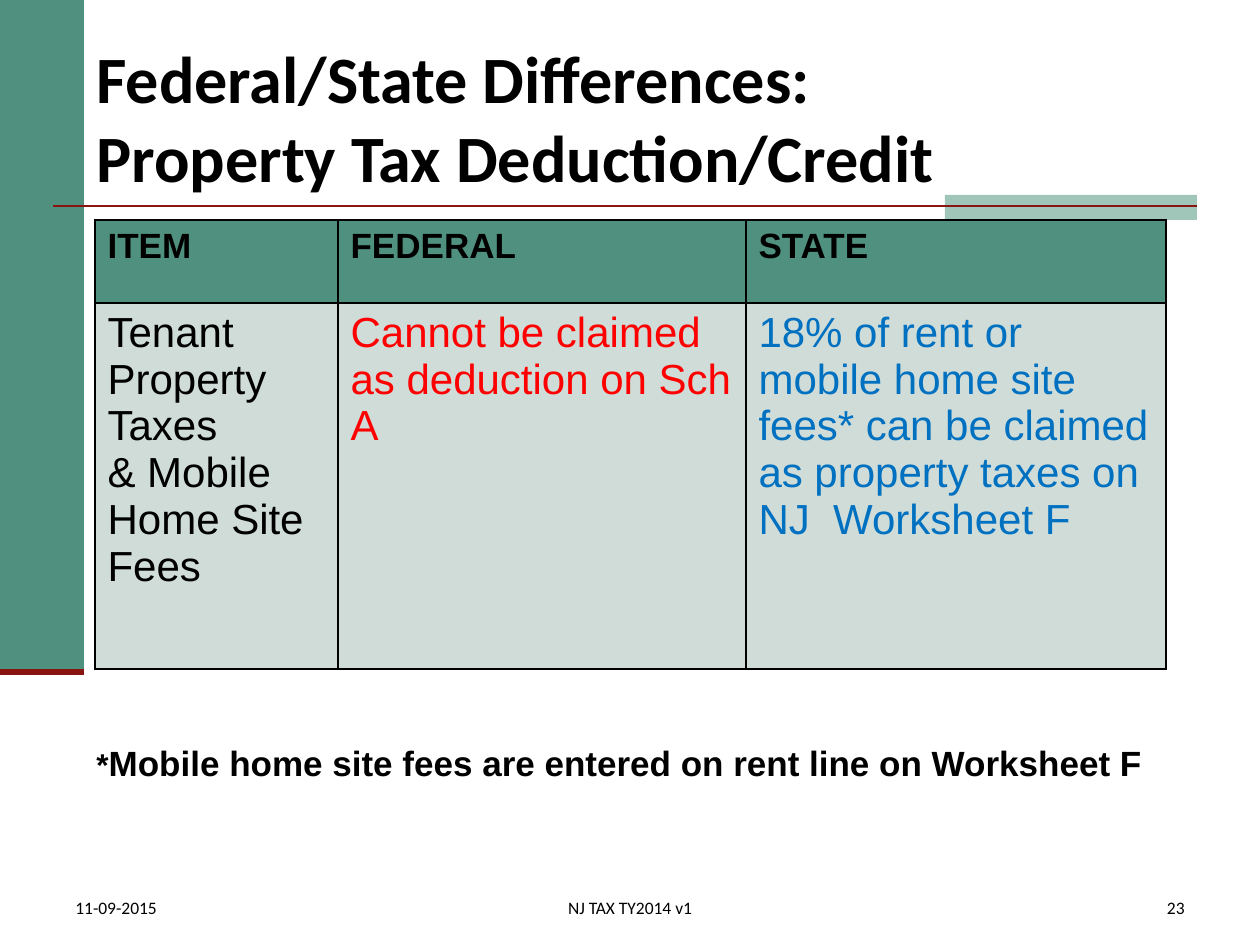
from dataclasses import dataclass

from lxml import etree
from pptx import Presentation
from pptx import util as u
from pptx.dml.color import RGBColor
from pptx.enum import shapes, text
from pptx.oxml import ns

PX = u.Inches(1) // 126
ALIGN = text.PP_ALIGN
ANCHOR = text.MSO_ANCHOR


@dataclass(frozen=True)
class Theme:
    green: str = "4F917E"
    pale_green: str = "A0C6BA"
    body_fill: str = "D0DCD8"
    dark_red: str = "891411"
    black: str = "000000"
    red: str = "FF0000"
    blue: str = "0070C0"
    heading_font: str = "Calibri"
    body_font: str = "Arial"
    title_size: float = 37.8
    cell_size: int = 24
    header_size: int = 20
    star_size: int = 18
    footer_size: int = 10


THEME = Theme()


def px(*lengths):
    return [length * PX for length in lengths]


def style_runs(paragraph, font, size, color=THEME.black, bold=False):
    for run in paragraph.runs:
        run.font.name = font
        run.font.size = u.Pt(size)
        run.font.bold = bold
        run.font.color.rgb = RGBColor.from_string(color)


def add_block(slide, box, color):
    block = slide.shapes.add_shape(shapes.MSO_SHAPE.RECTANGLE, *px(*box))
    block.shadow.inherit = False
    block.fill.solid()
    block.fill.fore_color.rgb = RGBColor.from_string(color)
    block.line.fill.background()


def add_rule(slide, left, right, y, width):
    rule = slide.shapes.add_connector(
        shapes.MSO_CONNECTOR.STRAIGHT, *px(left, y, right, y))
    rule.line.color.rgb = RGBColor.from_string(THEME.dark_red)
    rule.line.width = u.Pt(width)
    etree.SubElement(rule.element.spPr, ns.qn("a:effectLst"))


def add_text(slide, box, content, font, size, bold=False,
             align=ALIGN.LEFT, anchor=ANCHOR.TOP, wrap=True):
    frame = slide.shapes.add_textbox(*px(*box)).text_frame
    frame.word_wrap = wrap
    frame.vertical_anchor = anchor
    paragraph = frame.paragraphs[0]
    paragraph.text = content
    paragraph.alignment = align
    style_runs(paragraph, font, size, bold=bold)
    return paragraph


def add_borders(cell):
    """Draw a thin black line on all four sides, ahead of the cell's fill."""
    properties = cell._tc.get_or_add_tcPr()
    for position, side in enumerate(("lnL", "lnR", "lnT", "lnB")):
        line = etree.Element(ns.qn(f"a:{side}"), w=str(u.Pt(1)))
        fill = etree.SubElement(line, ns.qn("a:solidFill"))
        etree.SubElement(fill, ns.qn("a:srgbClr"), val=THEME.black)
        properties.insert(position, line)


def fill_cell(cell, content, fill, size, color, bold):
    cell.fill.solid()
    cell.fill.fore_color.rgb = RGBColor.from_string(fill)
    add_borders(cell)
    cell.text_frame.text = content
    for paragraph in cell.text_frame.paragraphs:
        style_runs(paragraph, THEME.body_font, size, color, bold)


def add_comparison_table(slide):
    columns = [
        (243, "ITEM", "Tenant\nProperty Taxes\n& Mobile Home Site Fees",
         THEME.black),
        (408, "FEDERAL", "Cannot be claimed as deduction on Sch A", THEME.red),
        (420, "STATE", "18% of rent or mobile home site fees* can be claimed "
         "as property taxes on NJ  Worksheet F", THEME.blue),
    ]
    heights = px(83, 366)
    width = sum(column[0] for column in columns)
    table = slide.shapes.add_table(
        2, len(columns), *px(95, 220, width), sum(heights)).table
    for row, height in zip(table.rows, heights):
        row.height = height
    for index, (width, header, body, color) in enumerate(columns):
        table.columns[index].width = width * PX
        fill_cell(table.cell(0, index), header, THEME.green,
                  THEME.header_size, THEME.black, True)
        fill_cell(table.cell(1, index), body, THEME.body_fill,
                  THEME.cell_size, color, False)


def add_footnote(slide):
    paragraph = add_text(slide, (84, 735, 1079, 55), "*", THEME.body_font,
                         THEME.header_size, bold=True, wrap=False)
    paragraph.add_run().text = (
        "Mobile home site fees are entered on rent line on Worksheet F")
    style_runs(paragraph, THEME.body_font, THEME.header_size, bold=True)
    paragraph.runs[0].font.size = u.Pt(THEME.star_size)


def add_footer(slide):
    for left, width, content, align in (
            (63, 273, "11-09-2015", ALIGN.LEFT),
            (417, 426, "NJ TAX TY2014 v1", ALIGN.CENTER),
            (935, 262, "23", ALIGN.RIGHT)):
        add_text(slide, (left, 882, width, 42), content, THEME.heading_font,
                 THEME.footer_size, align=align, anchor=ANCHOR.BOTTOM)


def main():
    presentation = Presentation()
    presentation.slide_width, presentation.slide_height = px(1260, 945)
    slide = presentation.slides.add_slide(presentation.slide_layouts[6])
    add_block(slide, (0, 0, 84, 672), THEME.green)
    add_block(slide, (945, 195, 252, 25), THEME.pale_green)
    add_rule(slide, 53, 1197, 206, 1.5)
    add_rule(slide, 0, 84, 672, 3.5)
    add_text(slide, (84, 38, 1113, 157),
             "Federal/State Differences:\nProperty Tax Deduction/Credit",
             THEME.heading_font, THEME.title_size, bold=True,
             anchor=ANCHOR.MIDDLE)
    add_comparison_table(slide)
    add_footer(slide)
    add_footnote(slide)
    presentation.save("out.pptx")


if __name__ == "__main__":
    main()
